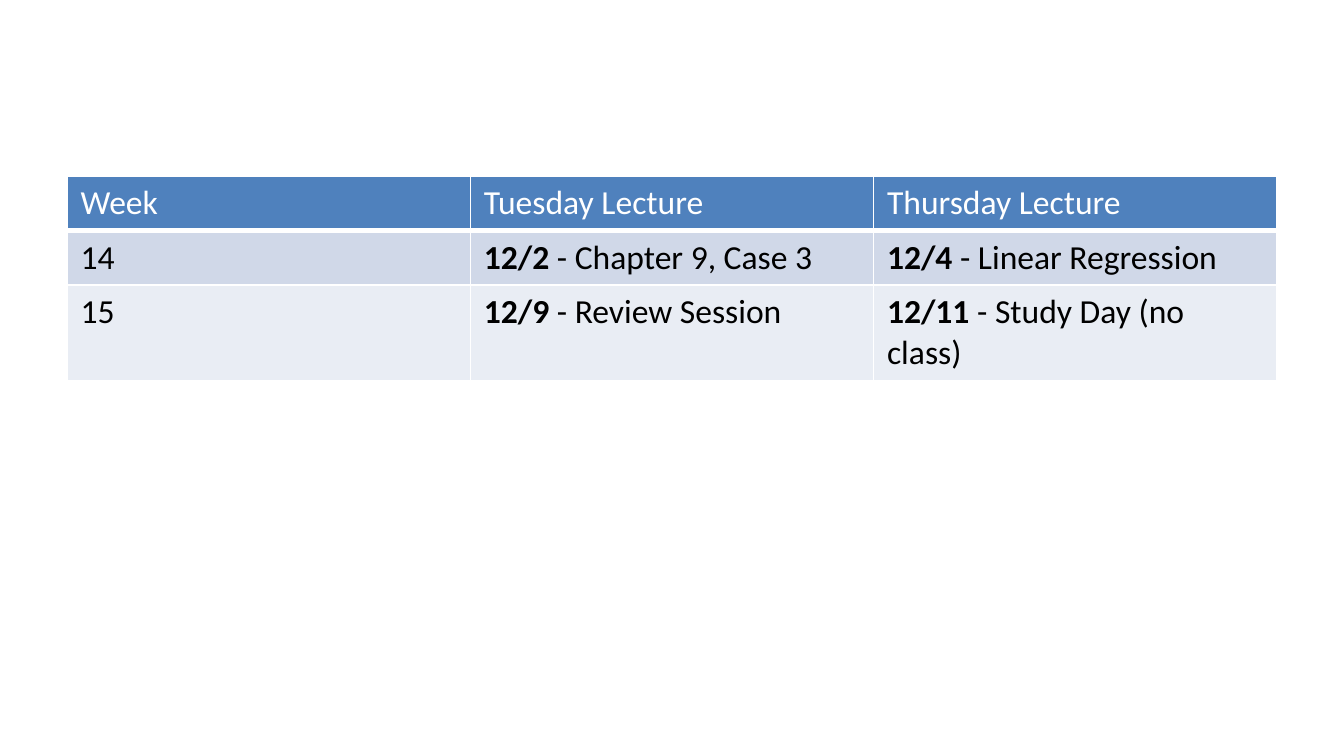
from lxml.etree import SubElement
from pptx import Presentation
from pptx.dml.color import RGBColor
from pptx.oxml.ns import qn
from pptx.util import Inches, Pt

COLORS = {
    "header": "4F81BD",
    "odd": "D0D8E8",
    "even": "E9EDF4",
    "white": "FFFFFF",
    "text": "000000",
}
HEADERS = ["Week", "Tuesday Lecture", "Thursday Lecture"]
WEEKS = [
    ("14", ("12/2", " - Chapter 9, Case 3"), ("12/4", " - Linear Regression")),
    ("15", ("12/9", " - Review Session"), ("12/11", " - Study Day (no class)")),
]
ROW_HEIGHTS = [0.4, 0.4, 0.7]


class ScheduleSlide:
    font = "Calibri"
    size = 18

    def __init__(self, prs):
        self.slide = prs.slides.add_slide(prs.slide_layouts[6])

    def run(self, p, text, color, bold=False):
        r = p.add_run()
        r.text = text
        r.font.name = self.font
        r.font.size = Pt(self.size)
        r.font.bold = bold
        r.font.color.rgb = RGBColor.from_string(COLORS[color])

    def borders(self, cell, bottom):
        tc_pr = cell._tc.get_or_add_tcPr()
        widths = {"lnL": 1, "lnR": 1, "lnT": 1, "lnB": bottom}
        for side, width in widths.items():
            ln = SubElement(tc_pr, qn(f"a:{side}"), w=str(Pt(width)))
            fill = SubElement(ln, qn("a:solidFill"))
            SubElement(fill, qn("a:srgbClr"), val=COLORS["white"])

    def cell(self, cell, runs, fill, color, bottom=1):
        self.borders(cell, bottom)
        cell.fill.solid()
        cell.fill.fore_color.rgb = RGBColor.from_string(COLORS[fill])
        p = cell.text_frame.paragraphs[0]
        for text, bold in runs:
            self.run(p, text, color, bold)

    def table(self, left, top, width, heights, headers, weeks):
        table = self.slide.shapes.add_table(
            len(heights), len(headers),
            Inches(left), Inches(top), Inches(width), Inches(sum(heights)),
        ).table
        for row, height in zip(table.rows, heights):
            row.height = Inches(height)
        for col, header in enumerate(headers):
            self.cell(table.cell(0, col), [(header, False)], "header", "white", bottom=3)
        for row, (week, *lectures) in enumerate(weeks, 1):
            fill = "odd" if row % 2 else "even"
            self.cell(table.cell(row, 0), [(week, False)], fill, "text")
            for col, (date, topic) in enumerate(lectures, 1):
                runs = [(date, True), (topic, False)]
                self.cell(table.cell(row, col), runs, fill, "text")


def main():
    prs = Presentation()
    prs.slide_width = Inches(10)
    prs.slide_height = prs.slide_width * 9 // 16
    s = ScheduleSlide(prs)
    s.table(0.5, 1.31, 9, ROW_HEIGHTS, HEADERS, WEEKS)
    prs.save("out.pptx")


if __name__ == "__main__":
    main()
